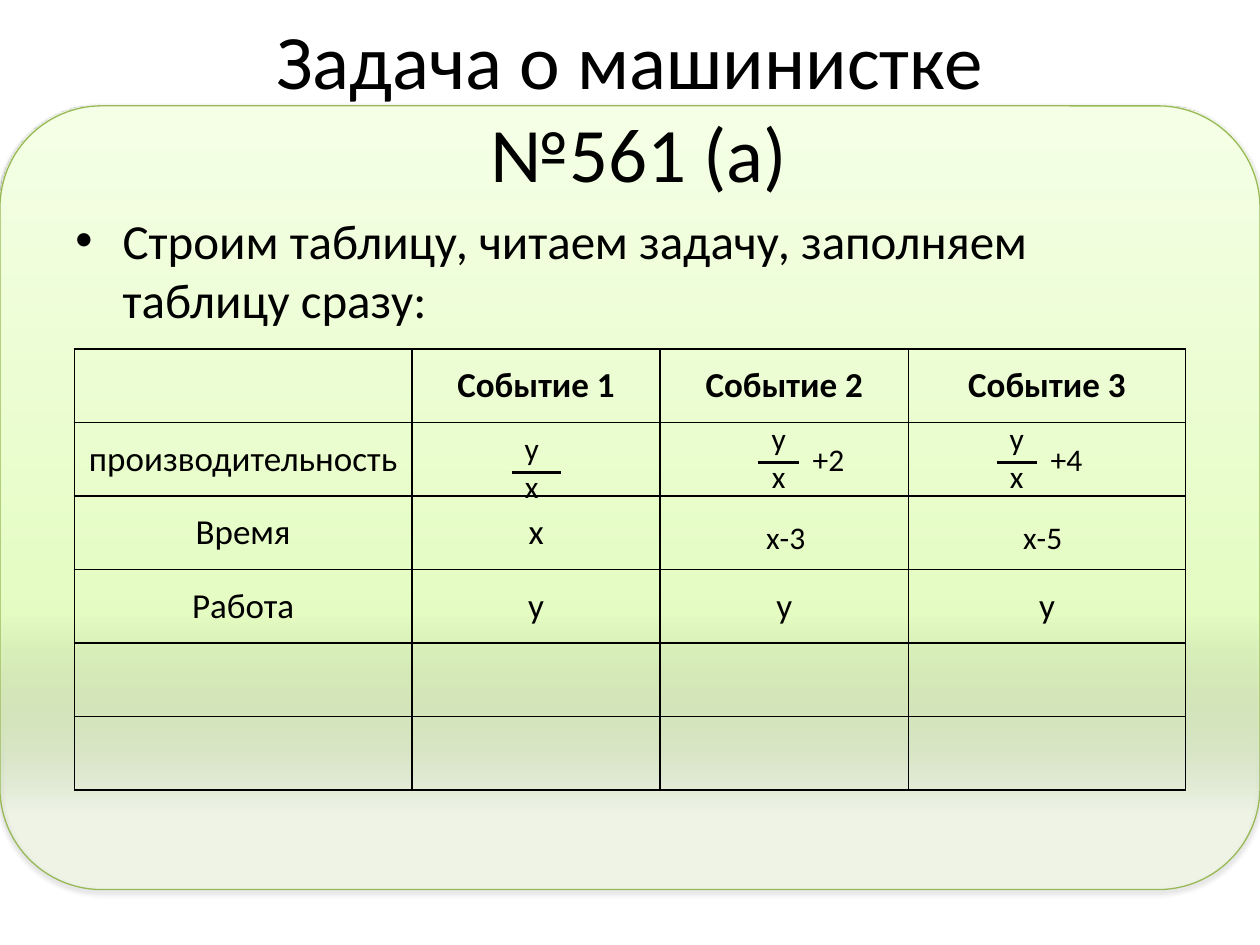
from dataclasses import dataclass
from lxml.etree import SubElement
from pptx import Presentation
from pptx.dml.color import RGBColor
from pptx.enum.shapes import MSO_CONNECTOR, MSO_SHAPE
from pptx.enum.text import MSO_ANCHOR, MSO_AUTO_SIZE, PP_ALIGN
from pptx.oxml import parse_xml
from pptx.oxml.ns import nsdecls, qn
from pptx.util import Inches, Pt


@dataclass(frozen=True)
class Theme:
    font: str = "Calibri"
    ink: str = "000000"
    edge: str = "98B955"
    glow: tuple = ((10, "DAFDA7", 14), (35, "E4FCC2", 100), (100, "F5FFE7", 100))
    title: int = 44
    body: int = 28
    cell: int = 20
    note: int = 18
    bar: float = 1.5
    rule: float = 1


LOOK = Theme()
WIDE, HIGH = Inches(10), Inches(7.5)
COLS, ROWS = 100, 75


def col(n):
    return round(WIDE * n / COLS)


def row(n):
    return round(HIGH * n / ROWS)


def area(left, top, wide, high):
    return col(left), row(top), col(wide), row(high)


def add_run(para, text, size, bold=False):
    run = para.add_run()
    run.text = text
    run.font.name = LOOK.font
    run.font.size = Pt(size)
    run.font.bold = bold
    run.font.color.rgb = RGBColor.from_string(LOOK.ink)


def add_panel(slide, box):
    panel = slide.shapes.add_shape(MSO_SHAPE.ROUNDED_RECTANGLE, *area(*box))
    panel.adjustments[0] = 0.13
    panel.line.color.rgb = RGBColor.from_string(LOOK.edge)
    panel.line.width = Pt(0.75)
    panel.fill.background()
    props = panel.element.spPr
    stops = "".join(
        f'<a:gs pos="{pos * 1000}"><a:srgbClr val="{tint}">'
        f'<a:alpha val="{solid * 1000}"/></a:srgbClr></a:gs>'
        for pos, tint, solid in LOOK.glow
    )
    props.replace(props.find(qn("a:noFill")), parse_xml(
        f'<a:gradFill {nsdecls("a")} rotWithShape="1"><a:gsLst>{stops}</a:gsLst>'
        '<a:lin ang="16200000" scaled="0"/></a:gradFill>'
    ))
    props.append(parse_xml(
        f'<a:effectLst {nsdecls("a")}><a:outerShdw blurRad="{Pt(3.1)}" '
        f'dist="{Pt(1.6)}" dir="5400000" rotWithShape="0"><a:srgbClr val="{LOOK.ink}">'
        '<a:alpha val="38000"/></a:srgbClr></a:outerShdw></a:effectLst>'
    ))
    panel.element.getparent().insert(2, panel.element)


def set_title(slide, box, lines):
    title = slide.shapes.title
    title.left, title.top, title.width, title.height = area(*box)
    frame = title.text_frame
    frame.vertical_anchor = MSO_ANCHOR.MIDDLE
    frame.auto_size = MSO_AUTO_SIZE.NONE
    para = frame.paragraphs[0]
    para.alignment = PP_ALIGN.CENTER
    for n, line in enumerate(lines):
        if n:
            para.add_line_break()
        add_run(para, line, LOOK.title)


def add_point(slide, box, text):
    frame = slide.shapes.add_textbox(*area(*box)).text_frame
    frame.word_wrap = True
    para = frame.paragraphs[0]
    para.space_before = Pt(LOOK.body * 0.2)
    add_run(para, text, LOOK.body)
    props = para._p.get_or_add_pPr()
    props.set("marL", str(col(3.75)))
    props.set("indent", str(-col(3.75)))
    SubElement(props, qn("a:buFont"), typeface="Arial")
    SubElement(props, qn("a:buChar"), char="•")


def add_note(slide, box, text, wrap=True):
    frame = slide.shapes.add_textbox(*area(*box)).text_frame
    frame.word_wrap = wrap
    frame.auto_size = MSO_AUTO_SIZE.SHAPE_TO_FIT_TEXT
    para = frame.paragraphs[0]
    para.alignment = PP_ALIGN.CENTER
    add_run(para, text, LOOK.note)


def add_bar(slide, left, top, wide):
    bar = slide.shapes.add_connector(
        MSO_CONNECTOR.STRAIGHT, col(left), row(top), col(left + wide), row(top)
    )
    bar.line.color.rgb = RGBColor.from_string(LOOK.ink)
    bar.line.width = Pt(LOOK.bar)
    SubElement(bar.element.spPr, qn("a:effectLst"))


def add_ratio(slide, left, top, wide):
    add_note(slide, (left, top - 3.9, 3.2, 4), "у", wrap=False)
    add_note(slide, (left, top - 0.9, 3.2, 4), "х", wrap=False)
    add_bar(slide, left, top, wide)


def set_cell(cell, text, bold):
    cell.fill.background()
    cell.vertical_anchor = MSO_ANCHOR.MIDDLE
    cell.margin_left = cell.margin_right = col(0.5)
    props = cell._tc.get_or_add_tcPr()
    for n, side in enumerate(("lnL", "lnR", "lnT", "lnB")):
        props.insert(n, parse_xml(
            f'<a:{side} {nsdecls("a")} w="{Pt(LOOK.rule)}"><a:solidFill>'
            f'<a:srgbClr val="{LOOK.ink}"/></a:solidFill></a:{side}>'
        ))
    if text:
        para = cell.text_frame.paragraphs[0]
        para.alignment = PP_ALIGN.CENTER
        add_run(para, text, LOOK.cell, bold)


def add_grid(slide, box, spans, data):
    grid = slide.shapes.add_table(len(data), len(spans), *area(*box)).table
    grid.first_row = grid.horz_banding = False
    for item, span in zip(grid.columns, spans):
        item.width = col(span)
    for r, line in enumerate(data):
        for c, text in enumerate(line):
            set_cell(grid.cell(r, c), text, bold=r == 0)


def main():
    deck = Presentation()
    deck.slide_width, deck.slide_height = WIDE, HIGH
    slide = deck.slides.add_slide(deck.slide_layouts[5])
    add_panel(slide, (0, 8.4, 100, 62.2))
    add_point(slide, (5, 16.2, 90, 49.5),
              "Строим таблицу, читаем задачу, заполняем таблицу сразу:")
    set_title(slide, (5.7, -0.3, 90, 17.3), ("Задача о машинистке ", "№561 (а)"))
    blank = ("",) * 4
    add_grid(slide, (5.9, 27.7, 88.2, 35), (26.8, 19.7, 19.7, 22), (
        ("", "Событие 1", "Событие 2", "Событие 3"),
        ("производительность", "", "", ""),
        ("Время", "х", "", ""),
        ("Работа", "у", "у", "у"),
        blank,
        blank,
    ))
    for left, top, wide in ((40.6, 37.5, 3.9), (60.2, 36.7, 3.2), (79.1, 36.7, 3.2)):
        add_ratio(slide, left, top, wide)
    for left, text in ((63.4, "+2"), (82.3, "+4")):
        add_note(slide, (left, 34.4, 4.7, 4), text)
    for left, text in ((58.9, "х-3"), (79.3, "х-5")):
        add_note(slide, (left, 40.6, 6.9, 4), text)
    deck.save("out.pptx")


if __name__ == "__main__":
    main()
